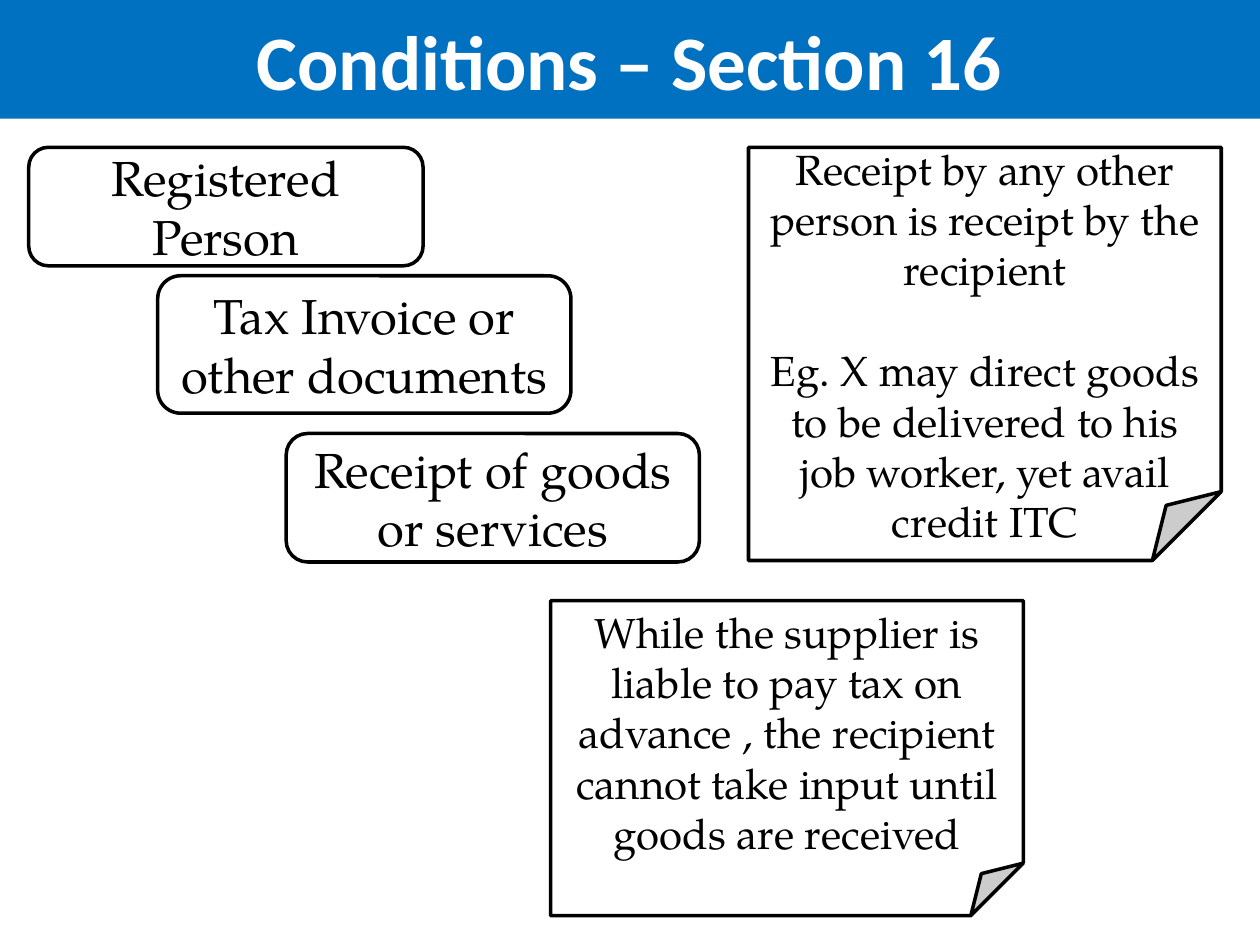
from dataclasses import dataclass

from pptx import Presentation
from pptx.dml.color import RGBColor
from pptx.enum.shapes import MSO_SHAPE as Preset
from pptx.enum.text import MSO_ANCHOR as Anchor, MSO_AUTO_SIZE as AutoSize, PP_ALIGN as Align
from pptx.util import Cm, Pt

BLUE, WHITE, BLACK = "0070C0", "FFFFFF", "000000"
SERIF = "TeX Gyre Pagella"
LINE_HEIGHT = 1.2


@dataclass
class Card:
    """A bordered shape with centred text, measured in centimetres."""

    preset: Preset
    left: float
    top: float
    width: float
    height: float
    size: int
    paragraphs: tuple[str, ...]
    top_inset: float = 0.13


CARDS = (
    Card(Preset.ROUNDED_RECTANGLE, 3.18, 5.56, 8.33, 2.77, 28,
         ("Tax Invoice or other documents",)),
    Card(Preset.ROUNDED_RECTANGLE, 5.77, 8.74, 8.33, 2.59, 28,
         ("Receipt of goods or services",)),
    Card(Preset.ROUNDED_RECTANGLE, 0.58, 2.97, 7.95, 2.39, 28,
         ("Registered Person",)),
    Card(Preset.FOLDED_CORNER, 11.1, 12.11, 9.53, 6.35, 24,
         ("While the supplier is liable to pay tax on advance , "
          "the recipient cannot take input until goods are received",)),
    Card(Preset.FOLDED_CORNER, 15.09, 2.97, 9.53, 8.33, 24,
         ("Receipt by any other person is receipt by the recipient",
          "Eg. X may direct goods to be delivered to his job worker, "
          "yet avail credit ITC"), top_inset=1.14),
)


def paint(color_format, color: str) -> None:
    """Apply a hex colour to a font colour or a fill's foreground."""
    color_format.rgb = RGBColor.from_string(color)


def fill_shape(shape, color: str) -> None:
    """Give a shape a solid fill."""
    shape.fill.solid()
    paint(shape.fill.fore_color, color)


def add_text(para, text: str, font: str, size: int, color: str, bold: bool = False) -> None:
    """Add one centred, formatted run to a paragraph."""
    para.alignment = Align.CENTER
    span = para.add_run()
    span.text = text
    span.font.name = font
    span.font.size = Pt(size)
    span.font.bold = bold
    paint(span.font.color, color)


def add_title(page, text: str) -> None:
    """Turn the title placeholder into the banner across the page."""
    title = page.shapes.title
    title.left, title.top, title.width, title.height = Cm(0), Cm(0), Cm(25.4), Cm(2.39)
    fill_shape(title, BLUE)
    frame = title.text_frame
    frame.auto_size = AutoSize.NONE
    frame.vertical_anchor = Anchor.BOTTOM
    frame.margin_left = frame.margin_right = Cm(0.25)
    frame.margin_top = frame.margin_bottom = Cm(0.25)
    add_text(frame.paragraphs[0], text, "Calibri", 44, WHITE, bold=True)


def add_card(page, card: Card) -> None:
    """Draw a card, with one line of space between its paragraphs."""
    box = page.shapes.add_shape(
        card.preset, Cm(card.left), Cm(card.top), Cm(card.width), Cm(card.height))
    box.shadow.inherit = False
    fill_shape(box, WHITE)
    paint(box.line.color, BLACK)
    box.line.width = Pt(2)
    frame = box.text_frame
    frame.word_wrap = True
    frame.vertical_anchor = Anchor.MIDDLE
    frame.margin_top = Cm(card.top_inset)
    for index, text in enumerate(card.paragraphs):
        para = frame.add_paragraph() if index else frame.paragraphs[0]
        if index:
            para.space_before = Pt(card.size * LINE_HEIGHT)
        add_text(para, text, SERIF, card.size, BLACK)


def main() -> None:
    """Build and save the deck."""
    deck = Presentation()
    deck.slide_width, deck.slide_height = Cm(25.4), Cm(19.05)
    page = deck.slides.add_slide(deck.slide_layouts[5])
    add_title(page, "Conditions – Section 16")
    for card in CARDS:
        add_card(page, card)
    deck.save("out.pptx")


if __name__ == "__main__":
    main()
